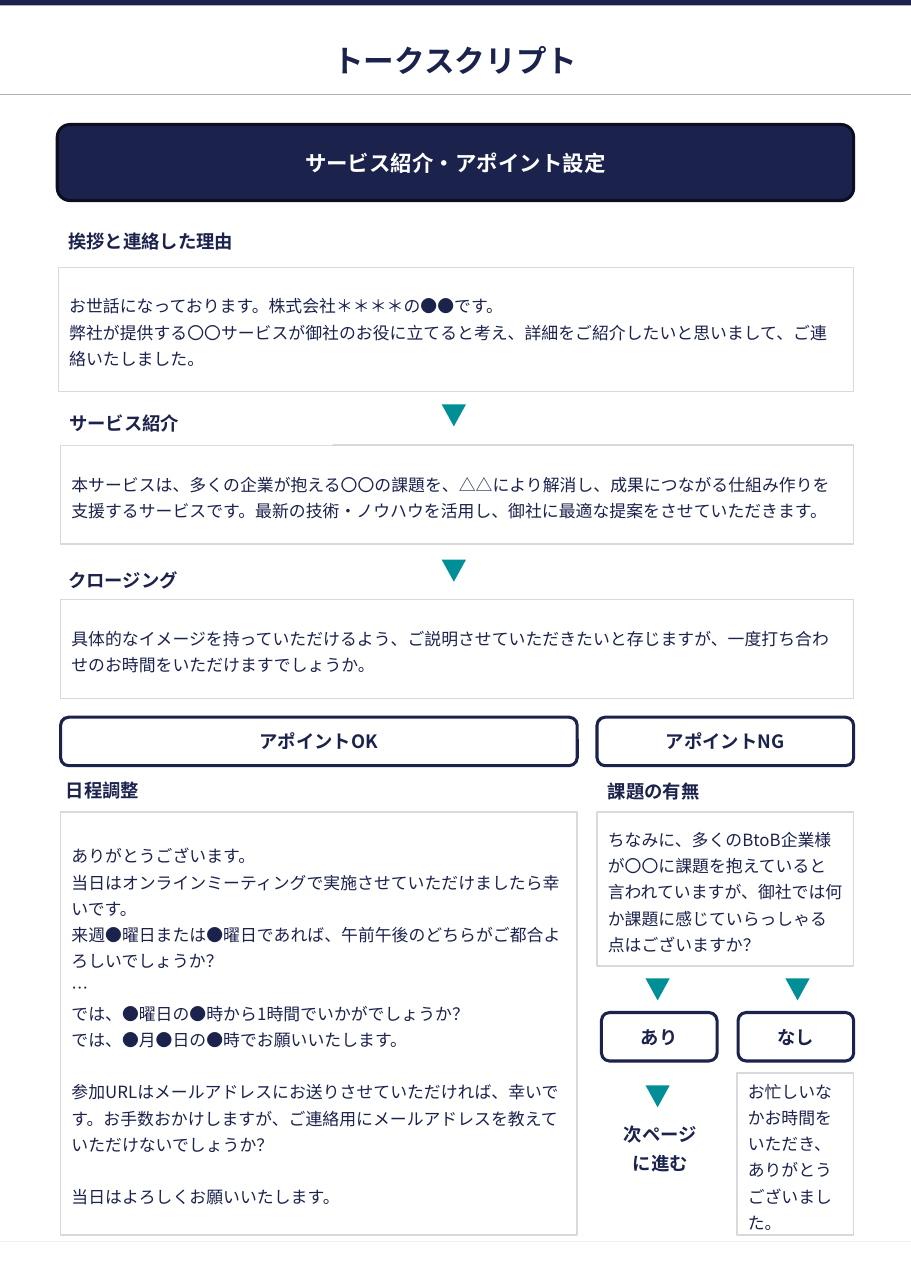
from dataclasses import dataclass

from lxml.etree import SubElement
from pptx import Presentation
from pptx.dml.color import RGBColor
from pptx.enum.shapes import MSO_CONNECTOR, MSO_SHAPE as Preset
from pptx.enum.text import MSO_ANCHOR, MSO_AUTO_SIZE, PP_ALIGN as Align
from pptx.oxml.ns import qn
from pptx.util import Pt

EMU_PER_PX = 9144  # 100 px to the inch
WIDTH, HEIGHT = 827, 1169
FONT = "Noto Sans CJK JP"
BLANK_LINE = Pt(17)
COLORS = {
    "navy": "1B224C", "ink": "0C0F21", "teal": "008F96", "white": "FFFFFF",
    "border": "D9D9D9", "rule": "AFAFAF", "footer": "F2F2F2",
}


@dataclass(frozen=True)
class Style:
    preset: Preset = Preset.RECTANGLE
    fill: str = "white"
    line: str | None = None
    line_width: float = 1
    text: str = "navy"
    size: int = 12
    bold: bool = True
    align: Align = Align.CENTER
    spacing: float | None = None


@dataclass(frozen=True)
class Box:
    style: Style
    left: int
    top: int
    width: int
    height: int
    paragraphs: tuple[str, ...] = ()
    gaps_before: tuple[int, ...] = ()


SPEECH = Style(line="border", size=11, bold=False, align=Align.LEFT, spacing=1.3)
THIN_SPEECH = Style(line="border", line_width=0.75, size=11, bold=False,
                    align=Align.LEFT, spacing=1.3)
HEADING = Style(align=Align.LEFT, spacing=1.3)
NEXT_PAGE = Style(spacing=1.3)
CHOICE = Style(Preset.ROUNDED_RECTANGLE, line="navy", line_width=2)
BANNER = Style(Preset.ROUNDED_RECTANGLE, fill="navy", line="ink", line_width=2,
               text="white", size=14)
TITLE = Style(size=20)
BAR = Style(fill="navy")
ARROW = Style(Preset.ISOSCELES_TRIANGLE, fill="teal")

BOXES = (
    Box(BAR, 0, 0, 828, 5),
    Box(BANNER, 52, 113, 723, 69, ("サービス紹介・アポイント設定",)),
    Box(THIN_SPEECH, 53, 243, 722, 112, (
        "お世話になっております。株式会社＊＊＊＊の●●です。",
        "弊社が提供する〇〇サービスが御社のお役に立てると考え、詳細をご紹介したいと思いまして、ご連絡いたしました。",
    )),
    Box(SPEECH, 55, 404, 720, 90, (
        "本サービスは、多くの企業が抱える〇〇の課題を、△△により解消し、成果につながる仕組み作りを支援するサービスです。"
        "最新の技術・ノウハウを活用し、御社に最適な提案をさせていただきます。",
    )),
    Box(SPEECH, 55, 544, 720, 90, (
        "具体的なイメージを持っていただけるよう、ご説明させていただきたいと存じますが、"
        "一度打ち合わせのお時間をいただけますでしょうか。",
    )),
    Box(SPEECH, 55, 737, 469, 384, (
        "ありがとうございます。",
        "当日はオンラインミーティングで実施させていただけましたら幸いです。",
        "来週●曜日または●曜日であれば、午前午後のどちらがご都合よろしいでしょうか？",
        "…",
        "では、●曜日の●時から1時間でいかがでしょうか？",
        "では、●月●日の●時でお願いいたします。",
        "参加URLはメールアドレスにお送りさせていただければ、幸いです。"
        "お手数おかけしますが、ご連絡用にメールアドレスを教えていただけないでしょうか？",
        "当日はよろしくお願いいたします。",
    ), gaps_before=(6, 7)),
    Box(SPEECH, 542, 737, 233, 140, (
        "ちなみに、多くのBtoB企業様が〇〇に課題を抱えていると言われていますが、"
        "御社では何か課題に感じていらっしゃる点はございますか？",
    )),
    Box(SPEECH, 669, 974, 106, 147,
        ("お忙しいなかお時間をいただき、ありがとうございました。",)),
    Box(HEADING, 52, 195, 249, 42, ("挨拶と連絡した理由",)),
    Box(HEADING, 53, 358, 249, 46, ("サービス紹介",)),
    Box(HEADING, 52, 506, 249, 35, ("クロージング",)),
    Box(HEADING, 50, 697, 103, 35, ("日程調整",)),
    Box(HEADING, 542, 698, 103, 35, ("課題の有無",)),
    Box(CHOICE, 55, 651, 469, 44, ("アポイントOK",)),
    Box(CHOICE, 542, 651, 233, 44, ("アポイントNG",)),
    Box(CHOICE, 546, 919, 105, 44, ("あり",)),
    Box(CHOICE, 670, 919, 105, 44, ("なし",)),
    *(Box(ARROW, left, top, 22, 20) for left, top in
      ((401, 367), (401, 508), (586, 888), (713, 888), (586, 985))),
    Box(NEXT_PAGE, 547, 1005, 105, 69, ("次ページ", "に進む")),
)


def px(length: int) -> int:
    return length * EMU_PER_PX


def color(name: str) -> RGBColor:
    return RGBColor.from_string(COLORS[name])


def apply(target, values: dict) -> None:
    for name, value in values.items():
        setattr(target, name, value)


def write_text(frame, box: Box, inset_x: int = 10, inset_y: int = 5) -> None:
    style = box.style
    apply(frame, {
        "word_wrap": True, "auto_size": MSO_AUTO_SIZE.NONE,
        "vertical_anchor": MSO_ANCHOR.MIDDLE,
        "margin_left": px(inset_x), "margin_right": px(inset_x),
        "margin_top": px(inset_y), "margin_bottom": px(inset_y),
    })
    for index, text in enumerate(box.paragraphs):
        paragraph = frame.add_paragraph() if index else frame.paragraphs[0]
        apply(paragraph, {"alignment": style.align, "line_spacing": style.spacing})
        if index in box.gaps_before:
            paragraph.space_before = BLANK_LINE
        run = paragraph.add_run()
        run.text = text
        apply(run.font, {"size": Pt(style.size), "bold": style.bold, "name": FONT})
        run.font.color.rgb = color(style.text)
        SubElement(run.font._element, qn("a:ea"), typeface=FONT)


def draw_box(slide, box: Box) -> None:
    style = box.style
    shape = slide.shapes.add_shape(
        style.preset, *map(px, (box.left, box.top, box.width, box.height)))
    shape.shadow.inherit = False
    shape.fill.solid()
    shape.fill.fore_color.rgb = color(style.fill)
    if style.line:
        shape.line.color.rgb = color(style.line)
        shape.line.width = Pt(style.line_width)
    else:
        shape.line.fill.background()
    if style is ARROW:
        shape.rotation = 180
    if box.paragraphs:
        write_text(shape.text_frame, box)


def draw_rule(slide, top: int, color_name: str) -> None:
    rule = slide.shapes.add_connector(
        MSO_CONNECTOR.STRAIGHT, 0, px(top), px(WIDTH), px(top))
    rule.line.color.rgb = color(color_name)
    rule.line.width = Pt(0.75)
    SubElement(rule._element.spPr, qn("a:effectLst"))


def draw_title(slide) -> None:
    box = Box(TITLE, 52, 34, 723, 42, ("トークスクリプト",))
    title = slide.shapes.title
    apply(title, {name: px(getattr(box, name))
                  for name in ("left", "top", "width", "height")})
    write_text(title.text_frame, box, inset_x=4, inset_y=4)


def main() -> None:
    presentation = Presentation()
    apply(presentation, {"slide_width": px(WIDTH), "slide_height": px(HEIGHT)})
    slide = presentation.slides.add_slide(
        presentation.slide_layouts.get_by_name("Title Only"))
    draw_title(slide)
    draw_rule(slide, 86, "rule")
    draw_rule(slide, 1127, "footer")
    for box in BOXES:
        draw_box(slide, box)
    presentation.save("out.pptx")


if __name__ == "__main__":
    main()
